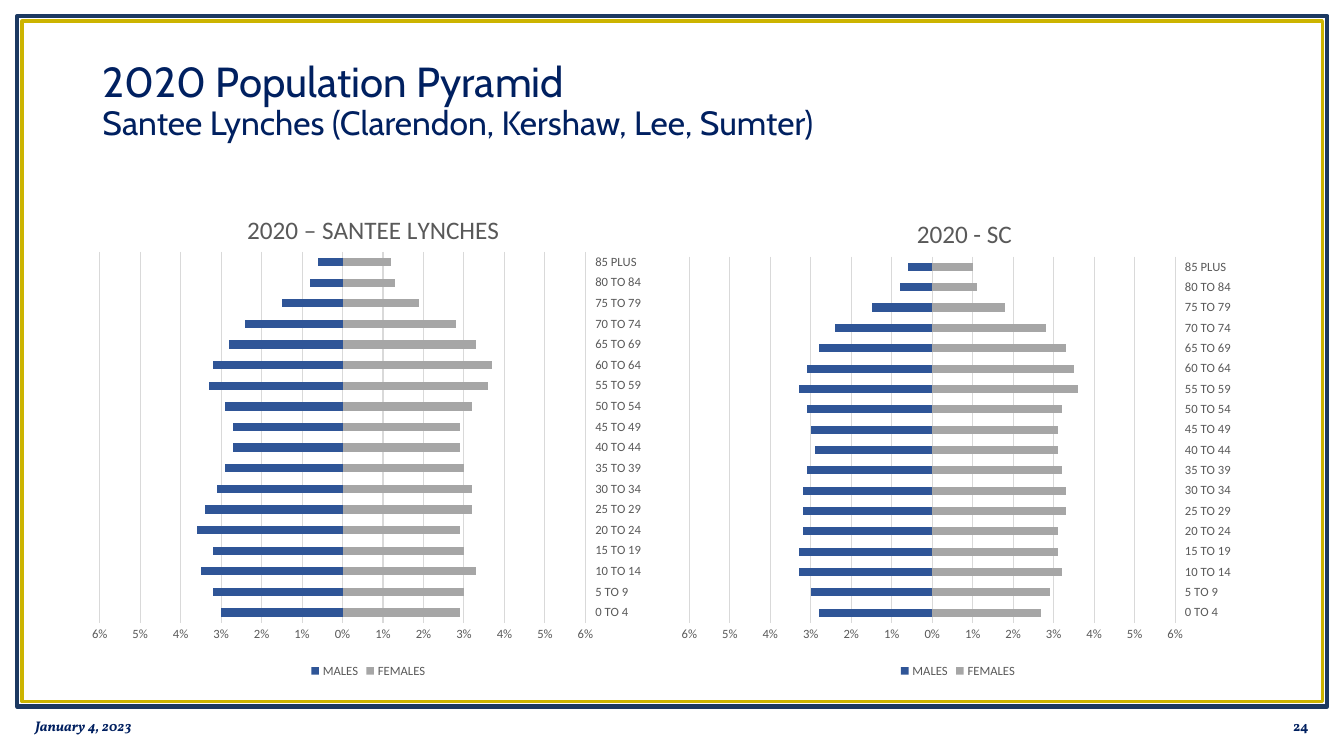
"""Build a slide with two 2020 population pyramids side by side."""
from lxml.etree import SubElement as Sub
from pptx import Presentation
from pptx.chart.data import CategoryChartData as Data
from pptx.dml.color import RGBColor as RGB
from pptx.enum.chart import XL_CHART_TYPE as Kind, XL_LEGEND_POSITION as Spot
from pptx.enum.chart import XL_TICK_LABEL_POSITION as Side, XL_TICK_MARK as Tick
from pptx.enum.shapes import MSO_SHAPE as Shape
from pptx.enum.text import MSO_ANCHOR as Anchor, PP_ALIGN as Align
from pptx.oxml.ns import qn
from pptx.util import Pt

HUES = {"navy": "002060", "frame": "1C3961", "gold": "CCB400", "text": "595959",
        "grid": "D9D9D9", "male": "2F5597", "female": "A6A6A6"}


def style(font, hue, **vals):
    """Set a font's colour and other attributes."""
    font.color.rgb = RGB.from_string(HUES[hue])
    for key, val in vals.items():
        setattr(font, key, val)


def place(node, at, **vals):
    """Give a chart part a manual layout as its child number at."""
    old = node.find(qn("c:layout"))
    if old is not None:
        node.remove(old)
    box = node.makeelement(qn("c:layout"))
    node.insert(at, box)
    man = Sub(box, qn("c:manualLayout"))
    for key, val in vals.items():
        Sub(man, qn(f"c:{key}")).set("val", str(val))


deck = Presentation()
deck.slide_width, deck.slide_height = Pt(960), Pt(540)
slide = deck.slides.add_slide(deck.slide_layouts[5])

frames = [((12.2, 11.5, 936, 493.2), "frame", 3),
          ((15.8, 15.1, 928.8, 486), "gold", 2.5)]
for rect, hue, wide in frames:
    frame = slide.shapes.add_shape(Shape.RECTANGLE, *map(Pt, rect))
    frame.shadow.inherit = False
    frame.fill.background()
    frame.line.color.rgb = RGB.from_string(HUES[hue])
    frame.line.width = Pt(wide)

title = slide.shapes.title
spots = {"left": 66, "top": 28.8, "width": 828, "height": 88.6}
for key, val in spots.items():
    setattr(title, key, Pt(val))
title.text_frame.vertical_anchor = Anchor.MIDDLE
title.text_frame.word_wrap = True
head = title.text_frame.paragraphs[0]
head.alignment, head.line_spacing = Align.LEFT, 0.9
lines = [("2020 Population Pyramid", 30),
         ("Santee Lynches (Clarendon, Kershaw, Lee, Sumter)", 24)]
for row, (text, size) in enumerate(lines):
    if row:
        head.add_line_break()
    run = head.add_run()
    run.text = text
    style(run.font, "navy", name="Cabin", size=Pt(size))

notes = [("January 4, 2023", 18, Align.LEFT, True),
         ("24", 725.8, Align.RIGHT, False)]
for text, left, align, slant in notes:
    foot = slide.shapes.add_textbox(Pt(left), Pt(504), Pt(216), Pt(28.8)).text_frame
    foot.word_wrap, foot.vertical_anchor = True, Anchor.MIDDLE
    foot.text = text
    para = foot.paragraphs[0]
    para.alignment = align
    style(para.runs[0].font, "navy", name="Vollkorn", size=Pt(10),
          bold=True, italic=slant)

ages = [f"{low} TO {low + 4}" for low in range(0, 85, 5)] + ["85 PLUS"]
charts = [
    {"title": "2020 – SANTEE LYNCHES", "left": 59, "head": (0.28, 0.04),
     "plot": (0.13, 0.75),
     "MALES": [30, 32, 35, 32, 36, 34, 31, 29, 27, 27, 29, 33, 32, 28, 24, 15, 8, 6],
     "FEMALES": [29, 30, 33, 30, 29, 32, 32, 30, 29, 29, 32, 36, 37, 33, 28, 19, 13, 12]},
    {"title": "2020 - SC", "left": 480.2, "head": (0.42, 0.05),
     "plot": (0.14, 0.74),
     "MALES": [28, 30, 33, 33, 32, 32, 32, 31, 29, 30, 31, 33, 31, 28, 24, 15, 8, 6],
     "FEMALES": [27, 29, 32, 31, 31, 33, 33, 32, 31, 31, 32, 36, 35, 33, 28, 18, 11, 10]},
]
small = {"name": "Calibri", "size": Pt(9), "bold": False}
for item in charts:
    data = Data(number_format="0%;0%")
    data.categories = ages
    for name, sign in (("MALES", -1), ("FEMALES", 1)):
        data.add_series(name, [sign * val / 1000 for val in item[name]])
    chart = slide.shapes.add_chart(Kind.BAR_STACKED, Pt(item["left"]), Pt(133.9),
                                   Pt(408.2), Pt(353.5), data).chart
    style(chart.font, "text", **small)

    chart.has_title = True
    label = chart.chart_title
    label.include_in_layout = False
    label.text_frame.text = item["title"]
    style(label.text_frame.paragraphs[0].runs[0].font, "text",
          **{**small, "size": Pt(18)})
    x, y = item["head"]
    place(label.element, 1, xMode="edge", yMode="edge", x=x, y=y)
    y, h = item["plot"]
    place(chart.element.find(".//" + qn("c:plotArea")), 0, layoutTarget="inner",
          xMode="edge", yMode="edge", x=0.03, y=y, w=0.85, h=h)

    chart.has_legend = True
    chart.legend.position = Spot.BOTTOM
    chart.legend.include_in_layout = False
    style(chart.legend.font, "text", **small)

    plot = chart.plots[0]
    plot.gap_width, plot.overlap, plot.vary_by_categories = 150, 100, False
    for bars, hue in zip(plot.series, ("male", "female")):
        bars.invert_if_negative = False
        bars.format.fill.solid()
        bars.format.fill.fore_color.rgb = RGB.from_string(HUES[hue])

    cat, val = chart.category_axis, chart.value_axis
    for axis in (cat, val):
        axis.major_tick_mark = axis.minor_tick_mark = Tick.NONE
        style(axis.tick_labels.font, "text", **small)
    cat.tick_label_position = Side.HIGH
    scale = {"minimum_scale": -0.06, "maximum_scale": 0.06, "major_unit": 0.01,
             "has_major_gridlines": True}
    for key, num in scale.items():
        setattr(val, key, num)
    val.tick_labels.number_format = "0%;0%"
    val.tick_labels.number_format_is_linked = False
    val.format.line.fill.background()
    for line in (cat.format.line, val.major_gridlines.format.line):
        line.color.rgb = RGB.from_string(HUES["grid"])
        line.width = Pt(0.75)

deck.save("out.pptx")
